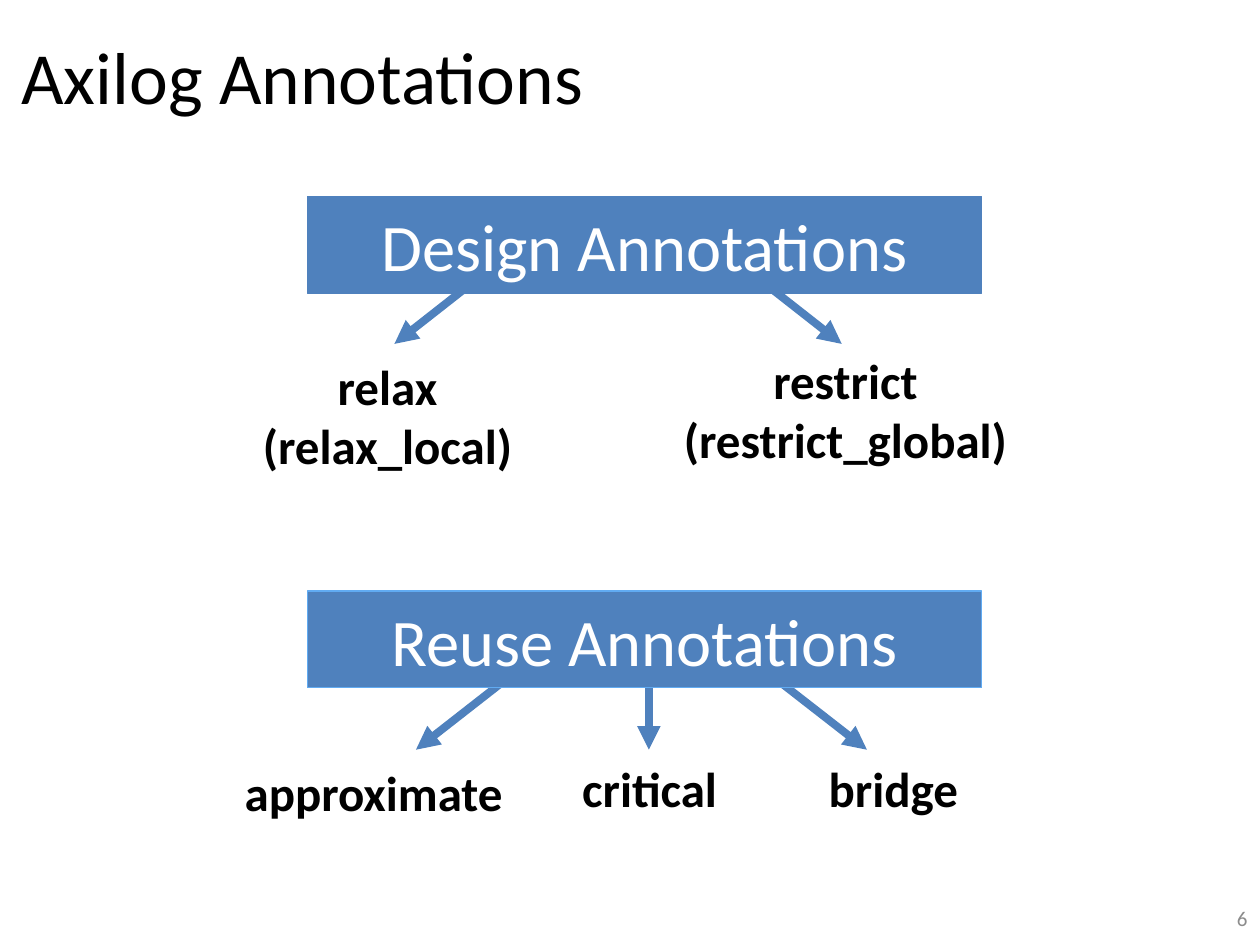
from collections import namedtuple
from dataclasses import dataclass

from lxml.etree import SubElement
from pptx import Presentation
from pptx.dml.color import RGBColor
from pptx.enum.shapes import MSO_CONNECTOR, MSO_SHAPE
from pptx.enum.text import MSO_ANCHOR as ANCHOR, MSO_AUTO_SIZE, PP_ALIGN as ALIGN
from pptx.oxml.ns import qn
from pptx.util import Pt

Box = namedtuple("Box", "x y w h")
# All lengths are offsets from the top left corner of the heading box.
Branch = namedtuple("Branch", "text start end label_x label_y label_w")


@dataclass(frozen=True)
class Theme:
    font: str = "Calibri"
    black: str = "000000"
    white: str = "FFFFFF"
    grey: str = "8C8C8C"
    blue: str = "4F81BD"
    light_blue: str = "61ABF2"
    title: float = 42
    heading: float = 38
    label: float = 28
    number: float = 12
    arrow: float = 4.5
    border: float = 0.75


THEME = Theme()


def rgb(value):
    return RGBColor.from_string(value)


def place(sp, box):
    sp.left, sp.top, sp.width, sp.height = (Pt(v) for v in box)


def write(sp, text, *, size, color=THEME.black, bold=False, align=ALIGN.CENTER,
          anchor=ANCHOR.MIDDLE, wrap=True):
    tf = sp.text_frame
    tf.word_wrap = wrap
    tf.auto_size = MSO_AUTO_SIZE.NONE if wrap else MSO_AUTO_SIZE.SHAPE_TO_FIT_TEXT
    tf.vertical_anchor = anchor
    p = tf.paragraphs[0]
    p.text = text
    p.alignment = align
    for r in p.runs:
        r.font.name = THEME.font
        r.font.size = Pt(size)
        r.font.bold = bold
        r.font.color.rgb = rgb(color)


def add_arrow(slide, start, end):
    line = slide.shapes.add_connector(
        MSO_CONNECTOR.STRAIGHT, *(Pt(v) for v in (*start, *end)))
    line.line.color.rgb = rgb(THEME.blue)
    line.line.width = Pt(THEME.arrow)
    SubElement(line.line._get_or_add_ln(), qn("a:tailEnd"), type="triangle")
    SubElement(line._element.spPr, qn("a:effectLst"))


def add_title(slide, box, text):
    title = slide.shapes.title
    place(title, box)
    write(title, text, size=THEME.title, align=ALIGN.LEFT)


def add_page_number(slide, box, text):
    sp = slide.shapes.add_textbox(*(Pt(v) for v in box))
    write(sp, text, size=THEME.number, color=THEME.grey, align=ALIGN.RIGHT)


def add_annotation_group(slide, box, heading, border, branches):
    """Draw a heading box with arrows that run from behind it to labels."""
    for b in branches:
        add_arrow(slide, *((box.x + x, box.y + y) for x, y in (b.start, b.end)))

    sp = slide.shapes.add_shape(MSO_SHAPE.RECTANGLE, *(Pt(v) for v in box))
    sp.shadow.inherit = False
    sp.fill.solid()
    sp.fill.fore_color.rgb = rgb(THEME.blue)
    sp.line.color.rgb = rgb(border)
    sp.line.width = Pt(THEME.border)
    write(sp, heading, size=THEME.heading, color=THEME.white)

    for b in branches:
        height = 75 if "\n" in b.text else 41
        label = Box(box.x + b.label_x - b.label_w / 2, box.y + b.label_y,
                    b.label_w, height)
        sp = slide.shapes.add_textbox(*(Pt(v) for v in label))
        write(sp, b.text, size=THEME.label, bold=True, anchor=ANCHOR.TOP, wrap=False)


def main():
    prs = Presentation()
    prs.slide_width, prs.slide_height = Pt(720), Pt(540)
    slide = prs.slides.add_slide(prs.slide_layouts[5])

    add_title(slide, Box(5, 1.5, 711, 83), "Axilog Annotations")
    add_annotation_group(
        slide, Box(175.7, 112.3, 385.2, 55.4), "Design Annotations", THEME.blue, [
            Branch("relax\n(relax_local)", (133.2, 18.7), (49.7, 84.2), 45.7, 88, 159),
            Branch("restrict\n(restrict_global)", (221.8, 18.7), (305.3, 84.2),
                   307.4, 84.3, 201.6),
        ])
    add_annotation_group(
        slide, Box(175.7, 337.7, 385.2, 55.4), "Reuse Annotations", THEME.light_blue, [
            Branch("approximate", (117.3, 47.5), (62, 90.7), 37.8, 94.3, 165),
            Branch("critical", (195.1, 47.5), (195.1, 90.7), 195.5, 92.1, 93),
            Branch("bridge", (264.2, 47.5), (319.7, 90.7), 334.8, 92.1, 89.3),
        ])
    add_page_number(slide, Box(552, 510.5, 168, 28.8), "6")

    prs.save("out.pptx")


if __name__ == "__main__":
    main()
